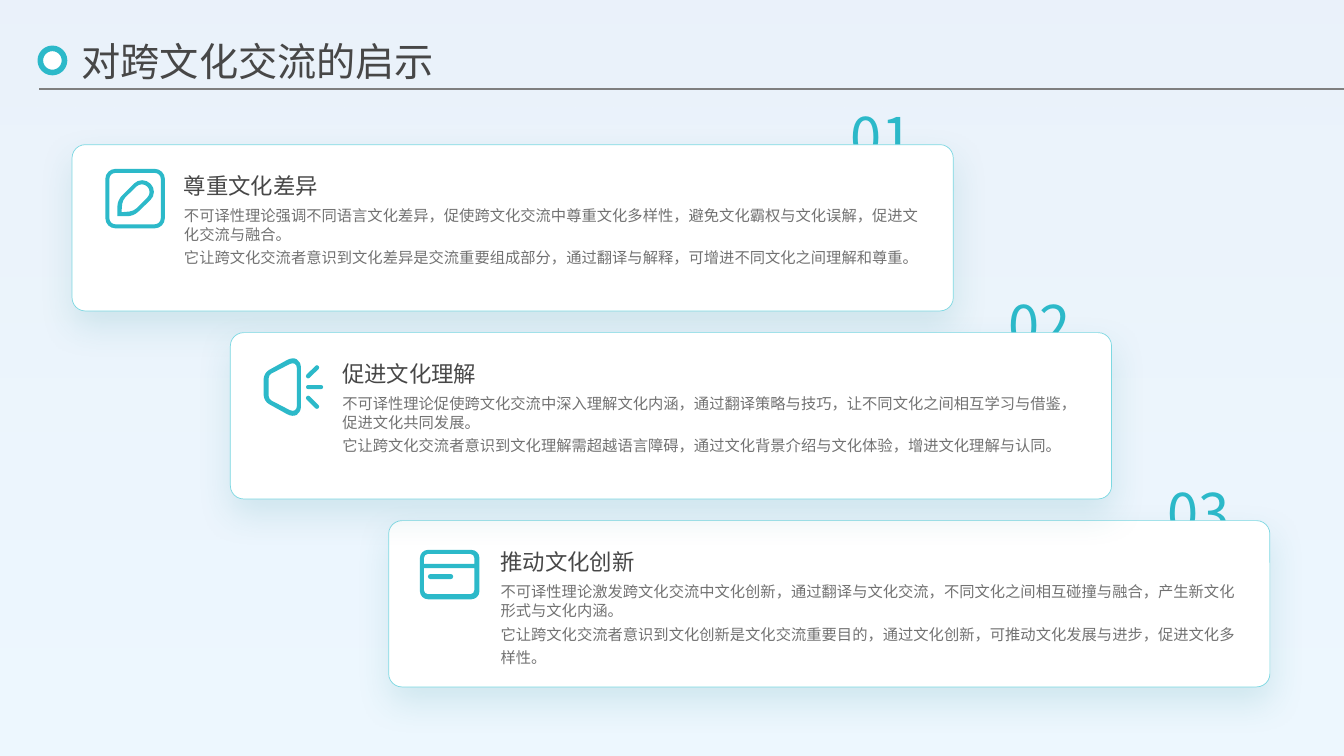
from dataclasses import dataclass
from math import hypot

from lxml.etree import SubElement
from pptx import Presentation
from pptx.dml.color import RGBColor
from pptx.enum.shapes import MSO_CONNECTOR, MSO_SHAPE
from pptx.enum.text import MSO_ANCHOR, MSO_AUTO_SIZE, PP_ALIGN
from pptx.oxml.ns import qn
from pptx.util import Inches, Pt


@dataclass(frozen=True)
class Theme:
    font: str = "Noto Sans CJK SC"
    white: RGBColor = RGBColor.from_string("FFFFFF")
    accent: RGBColor = RGBColor.from_string("2CB9C9")
    border: RGBColor = RGBColor.from_string("7DD8E2")
    heading: RGBColor = RGBColor.from_string("474747")
    body: RGBColor = RGBColor.from_string("727272")
    rule: RGBColor = RGBColor.from_string("7F7F7F")
    shadow: str = "218B97"
    backdrop: tuple = (("BFE4FF", 27), ("C1D8F2", 33))
    title_size: float = 28
    number_size: float = 40
    heading_size: float = 16
    body_size: float = 10.9


theme = Theme()
presentation = Presentation()
presentation.slide_width = Inches(13.33)
presentation.slide_height = Inches(7.5)
slide = presentation.slides.add_slide(presentation.slide_layouts[6])


def add_text(text, left, top, width, height, size, color, spacings=(1.2,),
             anchor=MSO_ANCHOR.MIDDLE, align=PP_ALIGN.LEFT, auto_size=MSO_AUTO_SIZE.NONE):
    box = slide.shapes.add_textbox(Inches(left), Inches(top), Inches(width), Inches(height))
    frame = box.text_frame
    frame.margin_left = frame.margin_right = frame.margin_top = frame.margin_bottom = 0
    frame.word_wrap = True
    frame.auto_size = auto_size
    frame.vertical_anchor = anchor
    frame.text = text
    for paragraph, spacing in zip(frame.paragraphs, spacings):
        paragraph.alignment = align
        paragraph.line_spacing = spacing
        font = paragraph.runs[0].font
        font.name = theme.font
        font.size = Pt(size)
        font.color.rgb = color
        SubElement(font._element, qn("a:ea"), typeface=theme.font)


def add_icon(contours, left, top):
    builder = None
    curve_starts = []
    count = 0
    for corners in contours:
        points = []
        for index, (x, y, radius) in enumerate(corners):
            if not radius:
                points.append((x, y))
                continue
            ends, handles = [], []
            for near_x, near_y, _ in (corners[index - 1], corners[(index + 1) % len(corners)]):
                share = radius / hypot(near_x - x, near_y - y)
                step_x, step_y = (near_x - x) * share, (near_y - y) * share
                ends.append((x + step_x, y + step_y))
                handles.append((x + 0.45 * step_x, y + 0.45 * step_y))
            curve_starts.append(count + len(points) + 1)
            points += [ends[0], *handles, ends[1]]
        count += len(points)
        points = [(Inches(x / 100), Inches(y / 100)) for x, y in points]
        if builder is None:
            builder = slide.shapes.build_freeform(*points[0])
        else:
            builder.move_to(*points[0])
        builder.add_line_segments(points[1:])
    icon = builder.convert_to_shape(Inches(left), Inches(top))
    outline = next(icon._element.iter(qn("a:moveTo"))).getparent()
    segments = [segment for segment in outline if segment.tag != qn("a:close")]
    for start in curve_starts:
        first, *others = segments[start:start + 3]
        first.tag = qn("a:cubicBezTo")
        for other in others:
            first.append(other[0])
            outline.remove(other)
    icon.shadow.inherit = False
    icon.fill.solid()
    icon.fill.fore_color.rgb = theme.accent
    icon.line.fill.background()


upper_ray = [(41.1, 17.1, 2), (44.1, 20.3, 2), (55.9, 8.7, 2), (52.9, 5.5, 2)]
pencil_icon = [
    [(0, 0, 10), (59, 0, 10), (59, 59, 10), (0, 59, 10)],
    [(4, 4, 6), (55, 4, 6), (55, 55, 6), (4, 55, 6)],
    [(12, 47, 0), (12, 31, 6), (36.5, 6.5, 11.5), (53, 23, 11.5), (28, 47, 6)],
    [(16, 43, 0), (17, 31, 4), (36.25, 12.25, 7.5), (47, 23, 7.5), (28, 42, 4)],
]
megaphone_icon = [
    [(0, 14, 6), (37, -6.5, 16), (37, 62.5, 16), (0, 42, 6)],
    [(5, 16, 3), (33, 1.5, 8), (33, 54.5, 8), (5, 40, 3)],
    [(42, 26, 2), (59, 26, 2), (59, 30, 2), (42, 30, 2)],
    upper_ray,
    [(x, 56 - y, radius) for x, y, radius in upper_ray],
]
bank_card_icon = [
    [(0, 0, 8), (59, 0, 8), (59, 49, 8), (0, 49, 8)],
    [(4, 4, 4), (54, 4, 4), (54, 14, 0), (4, 14, 0)],
    [(4, 18, 0), (54, 18, 0), (54, 44, 4), (4, 44, 4)],
    [(8, 24, 2.4), (33, 24, 2.4), (33, 29, 2.4), (8, 29, 2.4)],
]

backdrop = slide.shapes.add_shape(
    MSO_SHAPE.RECTANGLE, 0, 0, presentation.slide_width, presentation.slide_height)
backdrop.shadow.inherit = False
backdrop.line.fill.background()
backdrop.fill.gradient()
backdrop.fill.gradient_angle = 90
for stop, (color, _) in zip(backdrop.fill.gradient_stops, theme.backdrop):
    stop.color.rgb = RGBColor.from_string(color)
for color_element, (_, opacity) in zip(backdrop._element.iter(qn("a:srgbClr")), theme.backdrop):
    SubElement(color_element, qn("a:alpha"), val=str(opacity * 1000))

cards = [
    (0, "尊重文化差异",
     "不可译性理论强调不同语言文化差异，促使跨文化交流中尊重文化多样性，避免文化霸权与文化误解，促进文化交流与融合。\n"
     "它让跨文化交流者意识到文化差异是交流重要组成部分，通过翻译与解释，可增进不同文化之间理解和尊重。",
     pencil_icon, 0.33, 0.24),
    (2, "推动文化创新",
     "不可译性理论激发跨文化交流中文化创新，通过翻译与文化交流，不同文化之间相互碰撞与融合，产生新文化形式与文化内涵。\n"
     "它让跨文化交流者意识到文化创新是文化交流重要目的，通过文化创新，可推动文化发展与进步，促进文化多样性。",
     bank_card_icon, 0.31, 0.29),
    (1, "促进文化理解",
     "不可译性理论促使跨文化交流中深入理解文化内涵，通过翻译策略与技巧，让不同文化之间相互学习与借鉴，促进文化共同发展。\n"
     "它让跨文化交流者意识到文化理解需超越语言障碍，通过文化背景介绍与文化体验，增进文化理解与认同。",
     megaphone_icon, 0.33, 0.26),
]

for position, heading, body, contours, icon_left, icon_top in cards:
    left = 0.715 + 1.57 * position
    top = 1.435 + 1.865 * position
    add_text(f"{position + 1:02}", left + 7.56, top - 0.42, 0.94, 0.61,
             size=theme.number_size, color=theme.accent, spacings=(1.1,),
             align=PP_ALIGN.CENTER, auto_size=MSO_AUTO_SIZE.SHAPE_TO_FIT_TEXT)

    card = slide.shapes.add_shape(
        MSO_SHAPE.ROUNDED_RECTANGLE, Inches(left), Inches(top), Inches(8.74), Inches(1.65))
    card.adjustments[0] = 0.08
    card.fill.solid()
    card.fill.fore_color.rgb = theme.white
    card.line.color.rgb = theme.border
    card.line.width = Pt(0.5)
    card.shadow.inherit = False
    effects = card._element.spPr.find(qn("a:effectLst"))
    shadow = SubElement(effects, qn("a:outerShdw"), blurRad=str(Pt(25)), dist=str(Pt(10)),
                        dir="5400000", algn="t", rotWithShape="0")
    shadow_color = SubElement(shadow, qn("a:srgbClr"), val=theme.shadow)
    SubElement(shadow_color, qn("a:alpha"), val="15000")

    add_text(heading, left + 1.11, top + 0.22, 7.36, 0.31,
             size=theme.heading_size, color=theme.heading)
    add_text(body, left + 1.11, top + 0.61, 7.36, 0.91,
             size=theme.body_size, color=theme.body,
             spacings=(Pt(13.2), Pt(17.1)), anchor=MSO_ANCHOR.TOP)
    add_icon(contours, left + icon_left, top + icon_top)

ring = slide.shapes.add_shape(
    MSO_SHAPE.OVAL, Inches(0.4), Inches(0.48), Inches(0.24), Inches(0.24))
ring.shadow.inherit = False
ring.fill.solid()
ring.fill.fore_color.rgb = theme.white
ring.line.color.rgb = theme.accent
ring.line.width = Pt(4)

add_text("对跨文化交流的启示", 0.81, 0.32, 11.58, 0.47,
         size=theme.title_size, color=theme.heading)

title_rule = slide.shapes.add_connector(
    MSO_CONNECTOR.STRAIGHT, Inches(0.39), Inches(0.88), Inches(13.33), Inches(0.88))
title_rule.line.color.rgb = theme.rule
title_rule.line.width = Pt(1.25)
SubElement(title_rule._element.spPr, qn("a:effectLst"))

presentation.save("out.pptx")
